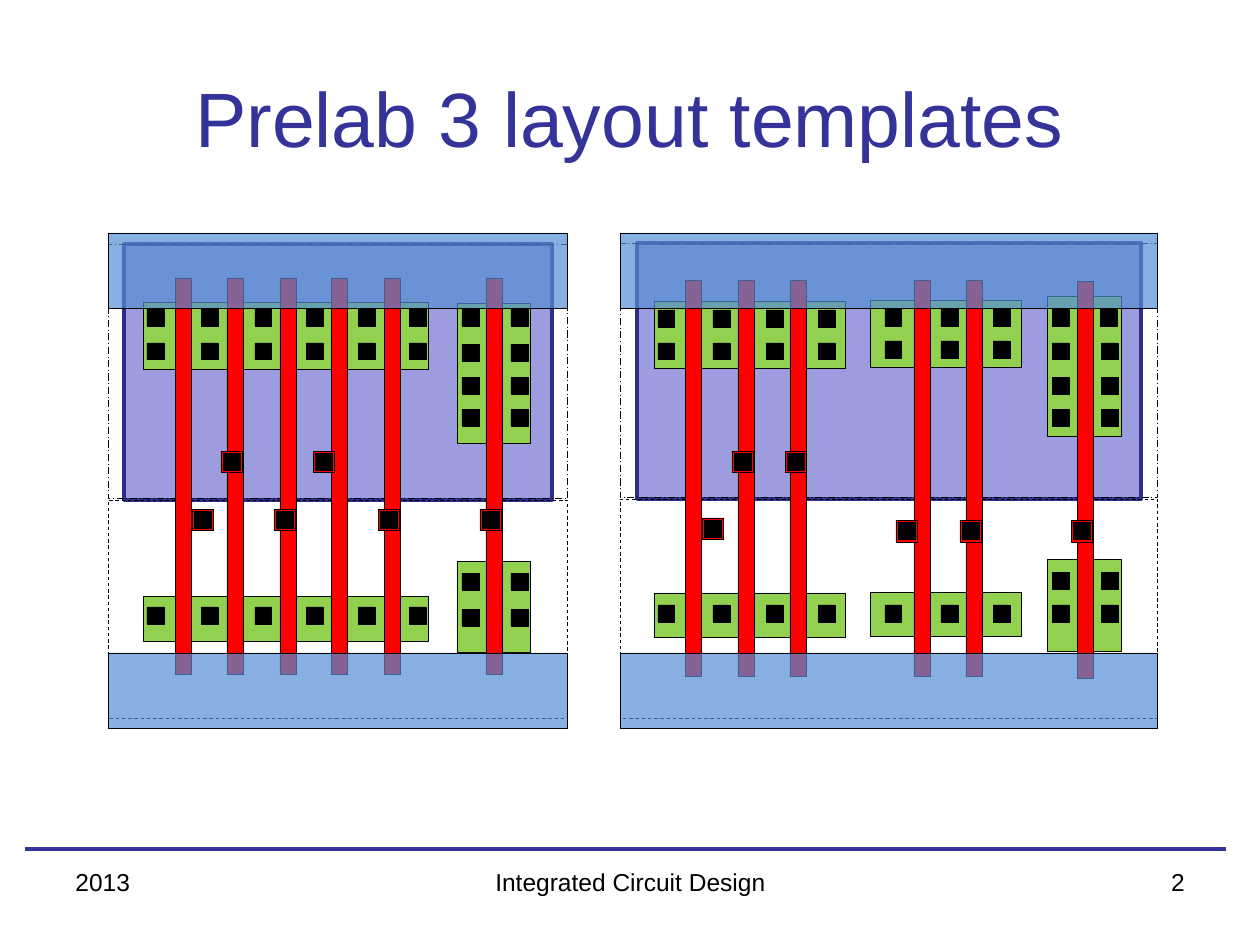
from itertools import product

from lxml import etree
from pptx import Presentation
from pptx import util as u
from pptx.dml.color import RGBColor
from pptx.enum import dml, shapes, text
from pptx.oxml.ns import qn

TITLE = "Prelab 3 layout templates"
FOOTERS = [
    ("2013", 63, 294, text.PP_ALIGN.LEFT),
    ("Integrated Circuit Design", 431, 399, text.PP_ALIGN.CENTER),
    ("2", 903, 294, text.PP_ALIGN.RIGHT),
]
NAVY, BLACK, RED = "333399", "000000", "FF0000"
GREEN, PURPLE, WELL_EDGE, METAL = "92D050", "9C9CDF", "2D2D8A", "558ED5"
POLY_WIDTH, POLY_HEIGHT = 16, 397
CONTACT, PAD = 17, 22
RAIL_TOPS, RAIL_HEIGHT = (653, 233), 76

CELLS = [
    {
        "left": 108, "width": 460, "top": 244, "well": (124, 428),
        "diffusions": [(143, 596, 286, 45), (143, 302, 286, 67),
                       (457, 304, 74, 140), (457, 562, 74, 91)],
        "polys": [(278, [175, 227, 280, 331, 384, 486])],
        "contacts": [([147, 201, 255, 306, 358, 409], [309, 343, 607]),
                     ([462, 511], [344, 377, 409, 573, 609])],
        "pads": [([192, 274, 378, 480], 509), ([221, 313], 451)],
        "top_contacts": ([462, 511], [309]),
    },
    {
        "left": 620, "width": 538, "top": 243, "well": (637, 504),
        "diffusions": [(871, 592, 151, 45), (871, 300, 151, 67),
                       (654, 593, 192, 45), (654, 301, 192, 67),
                       (1048, 297, 74, 140), (1048, 559, 74, 92)],
        "polys": [(280, [685, 738, 790, 914, 966]), (281, [1077])],
        "contacts": [([658, 713, 766, 818], [310, 343, 605]),
                     ([885, 941, 993], [309, 341, 605]),
                     ([1052, 1101], [343, 377, 409, 572, 605])],
        "pads": [([702], 518), ([732, 785], 451), ([896, 960, 1071], 520)],
        "top_contacts": ([1052, 1100], [309]),
    },
]


def px(value):
    return u.Emu(round(value * 914400 / 126))


def color(value):
    return RGBColor.from_string(value)


def add_rectangle(left, top, width, height, fill=None, line=BLACK,
                  weight=0.5, dash=None, alpha=None):
    shape = slide.shapes.add_shape(
        shapes.MSO_SHAPE.RECTANGLE, px(left), px(top), px(width), px(height))
    shape.shadow.inherit = False
    if fill:
        shape.fill.solid()
        shape.fill.fore_color.rgb = color(fill)
    else:
        shape.fill.background()
    if alpha:
        fill_color = shape._element.spPr.find(qn("a:solidFill"))[0]
        etree.SubElement(fill_color, qn("a:alpha"), val=str(alpha * 1000))
    shape.line.color.rgb = color(line)
    shape.line.width = u.Pt(weight)
    if dash:
        shape.line.dash_style = dash


def add_contacts(columns, rows):
    for left, top in product(columns, rows):
        add_rectangle(left, top, CONTACT, CONTACT, BLACK)


def add_pad(left, top):
    add_rectangle(left, top, PAD, PAD, RED)
    inset = (PAD - CONTACT) / 2
    add_contacts([left + inset], [top + inset])


def add_cell(cell):
    left, width, top = cell["left"], cell["width"], cell["top"]
    well_left, well_width = cell["well"]
    add_rectangle(well_left, top, well_width, 256, PURPLE, WELL_EDGE, 2)
    add_rectangle(left, top, width, 255, dash=dml.MSO_LINE.LONG_DASH_DOT)
    add_rectangle(left, top + 256, width, 219, dash=dml.MSO_LINE.DASH)
    for diffusion in cell["diffusions"]:
        add_rectangle(*diffusion, GREEN)
    for poly_top, columns in cell["polys"]:
        for column in columns:
            add_rectangle(column, poly_top, POLY_WIDTH, POLY_HEIGHT, RED)
    for columns, rows in cell["contacts"]:
        add_contacts(columns, rows)
    for columns, pad_top in cell["pads"]:
        for column in columns:
            add_pad(column, pad_top)
    for rail_top in RAIL_TOPS:
        add_rectangle(left, rail_top, width, RAIL_HEIGHT, METAL, alpha=70)
    add_contacts(*cell["top_contacts"])


def write(shape, content, size, font_color, alignment):
    paragraph = shape.text_frame.paragraphs[0]
    paragraph.alignment = alignment
    run = paragraph.add_run()
    run.text = content
    run.font.name = "Arial"
    run.font.size = u.Pt(size)
    run.font.color.rgb = color(font_color)


presentation = Presentation()
presentation.slide_width, presentation.slide_height = u.Inches(10), u.Inches(7.5)
slide = presentation.slides.add_slide(presentation.slide_layouts[5])

rule = slide.shapes.add_connector(
    shapes.MSO_CONNECTOR.STRAIGHT, px(25), px(849), px(1226), px(849))
rule.line.color.rgb = color(NAVY)
rule.line.width = u.Pt(2.25)
etree.SubElement(rule._element.spPr, qn("a:effectLst"))

title = slide.shapes.title
title.left, title.top, title.width, title.height = px(63), px(38), px(1134), px(158)
title.text_frame.vertical_anchor = text.MSO_ANCHOR.MIDDLE
write(title, TITLE, 44, NAVY, text.PP_ALIGN.CENTER)

for content, left, width, alignment in FOOTERS:
    footer = slide.shapes.add_textbox(px(left), px(861), px(width), px(66))
    footer.text_frame.word_wrap = True
    write(footer, content, 14, BLACK, alignment)

for cell in CELLS:
    add_cell(cell)

presentation.save("out.pptx")
